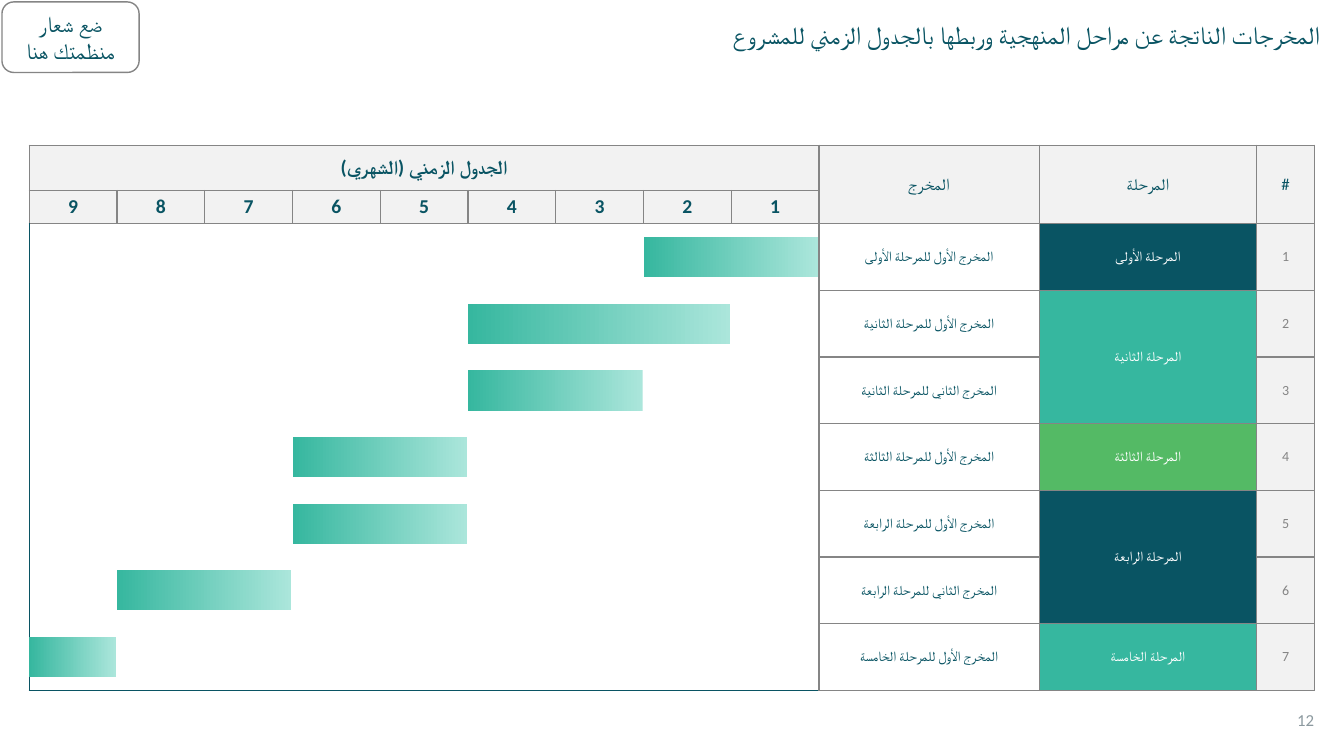
from lxml.etree import SubElement
from pptx import Presentation
from pptx.dml.color import RGBColor
from pptx.enum.shapes import MSO_SHAPE as SHAPE
from pptx.enum.text import MSO_ANCHOR as ANCHOR, MSO_AUTO_SIZE as AUTO_SIZE, PP_ALIGN as ALIGN
from pptx.oxml.ns import qn
from pptx.util import Pt

# Content
TITLE = "المخرجات الناتجة عن مراحل المنهجية وربطها بالجدول الزمني للمشروع"
LOGO_TEXT = "ضع شعار منظمتك هنا"
PAGE_NUMBER = "12"
TIMELINE = "الجدول الزمني (الشهري)"
HEADERS = ["المخرج", "المرحلة", "#"]

FONT = "Calibri"
DARK, TEAL, GREEN = "095463", "36B79F", "54BA65"
GRAY, NUMBER_GRAY, PALE, WHITE, MINT = "858585", "8C999F", "F2F2F2", "FFFFFF", "ABE6DB"

# Phase name, colour, deliverables as (name, first month, last month)
PHASES = [
    ("المرحلة الأولى", DARK, [("المخرج الأول للمرحلة الأولى", 1, 2)]),
    ("المرحلة الثانية", TEAL, [("المخرج الأول للمرحلة الثانية", 2, 4),
                               ("المخرج الثاني للمرحلة الثانية", 3, 4)]),
    ("المرحلة الثالثة", GREEN, [("المخرج الأول للمرحلة الثالثة", 5, 6)]),
    ("المرحلة الرابعة", DARK, [("المخرج الأول للمرحلة الرابعة", 5, 6),
                               ("المخرج الثاني للمرحلة الرابعة", 7, 8)]),
    ("المرحلة الخامسة", TEAL, [("المخرج الأول للمرحلة الخامسة", 9, 9)]),
]

# Table geometry in points
MONTHS = 9
LEFT, TOP = 20.9, 103.7
MONTH_WIDTH, ROW_HEIGHT, BAR_HEIGHT = 62.7, 47.6, 28.8
HEADER_ROWS = [32.4, 23.8]
COLUMNS = [MONTH_WIDTH] * MONTHS + [157.4, 155.2, 41.6]
OUTPUT, PHASE, NUMBER = range(MONTHS, MONTHS + 3)
DELIVERABLES = sum(len(outputs) for _, _, outputs in PHASES)
ROWS = HEADER_ROWS + [ROW_HEIGHT] * DELIVERABLES


def color(value):
    return RGBColor.from_string(value)


def box(left, top, width, height):
    return Pt(left), Pt(top), Pt(width), Pt(height)


def write(frame, text, size, ink, align=ALIGN.CENTER, bold=False, rtl=True):
    paragraph = frame.paragraphs[0]
    paragraph.alignment = align
    if rtl:
        paragraph._p.get_or_add_pPr().set("rtl", "1")
    run = paragraph.add_run()
    run.text = text
    run.font.name, run.font.size, run.font.bold = FONT, Pt(size), bold
    run.font.color.rgb = color(ink)
    SubElement(run._r.get_or_add_rPr(), qn("a:cs")).set("typeface", FONT)


def format_cell(cell, fill, borders):
    """Set fill, margins and borders; borders maps L, R, T, B to a colour."""
    properties = cell._tc.get_or_add_tcPr()
    for side in "LRTB":
        line = SubElement(properties, qn("a:ln" + side), w=str(Pt(1)))
        if side in borders:
            solid = SubElement(line, qn("a:solidFill"))
            SubElement(solid, qn("a:srgbClr"), val=borders[side])
        else:
            SubElement(line, qn("a:noFill"))
    cell.fill.solid()
    cell.fill.fore_color.rgb = color(fill)
    cell.margin_left = cell.margin_right = Pt(5.76)
    cell.margin_top = cell.margin_bottom = Pt(2.88)
    cell.vertical_anchor = ANCHOR.MIDDLE
    cell.text_frame.paragraphs[0]._p.get_or_add_endParaRPr().set("sz", "1000")


presentation = Presentation()
presentation.slide_width, presentation.slide_height = Pt(960), Pt(540)
slide = presentation.slides.add_slide(presentation.slide_layouts[5])
shapes = slide.shapes

# Title
title = shapes.title
title.left, title.top, title.width, title.height = box(151.2, 10.1, 799.2, 28.8)
title.text_frame.word_wrap = True
title.text_frame.auto_size = AUTO_SIZE.NONE
title.text_frame.vertical_anchor = ANCHOR.TOP
write(title.text_frame, TITLE, 18, DARK, ALIGN.RIGHT)

# Logo holder
logo = shapes.add_shape(SHAPE.ROUNDED_RECTANGLE, *box(1.4, 1.4, 98, 50.4))
logo.shadow.inherit = False
logo.fill.solid()
logo.fill.fore_color.rgb = color(WHITE)
logo.line.color.rgb = color(GRAY)
logo.line.width = Pt(1)
logo.text_frame.word_wrap = True
logo.text_frame.vertical_anchor = ANCHOR.MIDDLE
write(logo.text_frame, LOGO_TEXT, 16, DARK, rtl=False)

# Page number
page = shapes.add_textbox(*box(919.4, 503.3, 31.7, 28.8))
page.text_frame.word_wrap = True
write(page.text_frame, PAGE_NUMBER, 12, NUMBER_GRAY, ALIGN.LEFT)

# Table grid
table = shapes.add_table(len(ROWS), len(COLUMNS),
                         *box(LEFT, TOP, sum(COLUMNS), sum(ROWS))).table
table.first_row = table.horz_banding = False
for column, width in zip(table.columns, COLUMNS):
    column.width = Pt(width)
for row, height in zip(table.rows, ROWS):
    row.height = Pt(height)

# Cell fills and borders
first_row, last_row = len(HEADER_ROWS), len(ROWS) - 1
for r in range(len(ROWS)):
    for c in range(len(COLUMNS)):
        borders = dict.fromkeys("LRTB", GRAY)
        fill = PALE if r < first_row or c == NUMBER else WHITE
        if r >= first_row and c < MONTHS:
            edges = {"L": (c == 0, DARK), "R": (c == MONTHS - 1, GRAY),
                     "T": (r == first_row, GRAY), "B": (r == last_row, DARK)}
            borders = {side: ink for side, (shown, ink) in edges.items() if shown}
        format_cell(table.cell(r, c), fill, borders)

# Header
table.cell(0, 0).merge(table.cell(0, MONTHS - 1))
write(table.cell(0, 0).text_frame, TIMELINE, 14, DARK, bold=True)
for c in range(MONTHS):
    write(table.cell(1, c).text_frame, str(MONTHS - c), 14, DARK, bold=True, rtl=False)
for c, header in enumerate(HEADERS, OUTPUT):
    table.cell(0, c).merge(table.cell(1, c))
    write(table.cell(0, c).text_frame, header, 12, DARK, rtl=c == PHASE)

# Phases, deliverables and their bars
r = first_row
for phase, phase_fill, outputs in PHASES:
    phase_cell = table.cell(r, PHASE)
    if len(outputs) > 1:
        phase_cell.merge(table.cell(r + len(outputs) - 1, PHASE))
    phase_cell.fill.fore_color.rgb = color(phase_fill)
    write(phase_cell.text_frame, phase, 10, WHITE)
    for output, start, end in outputs:
        write(table.cell(r, OUTPUT).text_frame, output, 10, DARK)
        write(table.cell(r, NUMBER).text_frame, str(r - first_row + 1), 10, GRAY, rtl=False)
        bar = shapes.add_shape(SHAPE.RECTANGLE, *box(
            LEFT + (MONTHS - end) * MONTH_WIDTH,
            TOP + sum(ROWS[:r]) + (ROW_HEIGHT - BAR_HEIGHT) / 2,
            (end - start + 1) * MONTH_WIDTH - 0.8, BAR_HEIGHT))
        bar.shadow.inherit = False
        bar.line.fill.background()
        bar.fill.gradient()
        bar.fill.gradient_angle = 180
        for stop, ink, position in zip(bar.fill.gradient_stops, (MINT, TEAL), (0, 1)):
            stop.color.rgb = color(ink)
            stop.position = position
        r += 1

presentation.save("out.pptx")
